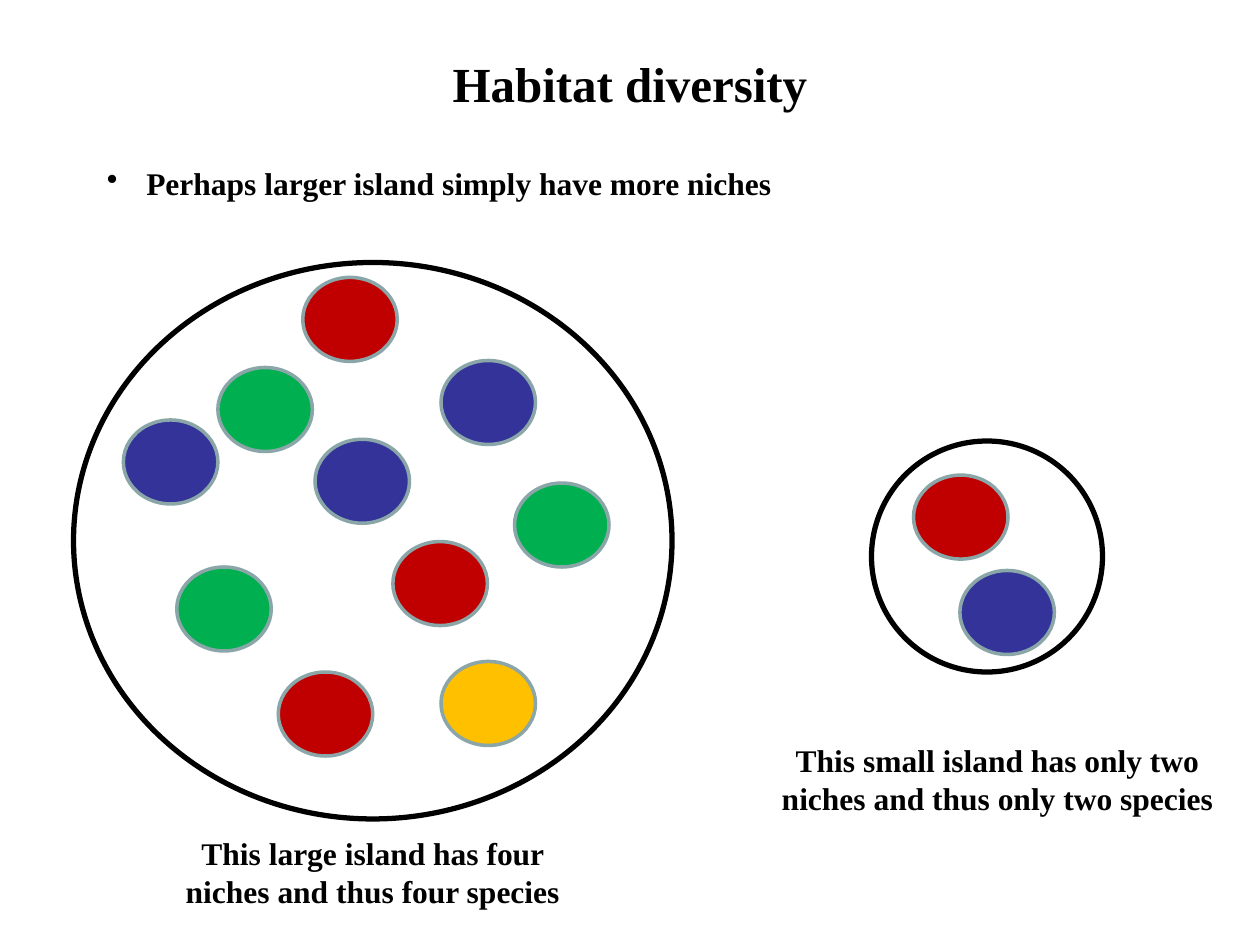
from lxml import etree
from pptx import Presentation
from pptx.dml.color import RGBColor
from pptx.enum.shapes import MSO_SHAPE
from pptx.enum.text import MSO_ANCHOR, MSO_AUTO_SIZE, PP_ALIGN
from pptx.oxml.ns import qn
from pptx.util import Pt

OVAL = MSO_SHAPE.OVAL
TOP = MSO_ANCHOR.TOP
LEFT, CENTER = PP_ALIGN.LEFT, PP_ALIGN.CENTER
NO_FIT = MSO_AUTO_SIZE.NONE

FONT = "Times New Roman"
COLORS = {
    "ink": "000000",
    "niche_line": "8AA6A8",
    "blue": "333399",
    "red": "C00000",
    "green": "00B050",
    "yellow": "FFC000",
}
NICHE_SIZE = (54, 48)

# Niches: left and top within their island, colour
LARGE_NICHES = [
    (138, 101, "blue"), (28.5, 90, "blue"), (117, 234, "red"),
    (252, 126, "green"), (59, 174, "green"), (82.5, 60, "green"),
    (210, 56, "blue"), (182.5, 159.5, "red"), (131, 8.5, "red"),
    (210, 228, "yellow"),
]
SMALL_NICHES = [(24, 19.5, "red"), (50.5, 74, "blue")]


def color(name):
    return RGBColor.from_string(COLORS[name])


def set_text(sp, text, size=18, align=CENTER, wrap=True):
    tf = sp.text_frame
    tf.auto_size = NO_FIT
    tf.word_wrap = wrap
    tf.vertical_anchor = TOP
    p = tf.paragraphs[0]
    p.text = text
    p.alignment = align
    p.font.name = FONT
    p.font.size = Pt(size)
    p.font.bold = True
    p.font.color.rgb = color("ink")
    return p


def add_title(slide, box, text):
    sp = slide.shapes.title
    sp.left, sp.top, sp.width, sp.height = map(Pt, box)
    p = set_text(sp, text, size=28)
    p.line_spacing = 1.0
    p.space_before = Pt(0)


def add_bullet(slide, box, text, indent=22.5):
    sp = slide.shapes.add_textbox(*map(Pt, box))
    p = set_text(sp, text, align=LEFT, wrap=False)
    pPr = p._p.get_or_add_pPr()
    pPr.set("marL", str(Pt(indent)))
    pPr.set("indent", str(-Pt(indent)))
    bullet = etree.Element(qn("a:buChar"), char="•")
    pPr.insert_element_before(bullet, "a:tabLst", "a:defRPr", "a:extLst")


def add_caption(slide, box, text):
    set_text(slide.shapes.add_textbox(*map(Pt, box)), text)


def add_oval(slide, box, line, width, fill=None):
    sp = slide.shapes.add_shape(OVAL, *map(Pt, box))
    sp.shadow.inherit = False
    if fill:
        sp.fill.solid()
        sp.fill.fore_color.rgb = color(fill)
    else:
        sp.fill.background()
    sp.line.color.rgb = color(line)
    sp.line.width = Pt(width)


def add_island(slide, box, niches):
    left, top = box[:2]
    add_oval(slide, box, "ink", 3)
    for x, y, fill in niches:
        add_oval(slide, (left + x, top + y, *NICHE_SIZE), "niche_line", 2, fill)


def main():
    prs = Presentation()
    prs.slide_width, prs.slide_height = Pt(720), Pt(540)
    slide = prs.slides.add_slide(prs.slide_layouts[5])

    # Heading
    add_title(slide, (0, 27, 720, 41), "Habitat diversity")
    add_bullet(slide, (54, 90, 398, 29),
               "Perhaps larger island simply have more niches")

    # Islands with their niches
    add_island(slide, (42, 150, 342, 318), LARGE_NICHES)
    add_island(slide, (498, 252, 132, 132), SMALL_NICHES)

    # Captions
    add_caption(slide, (90, 473, 246, 51),
                "This large island has four niches and thus four species")
    add_caption(slide, (426, 420, 288, 51),
                "This small island has only two niches and thus only two species")

    prs.save("out.pptx")


if __name__ == "__main__":
    main()
